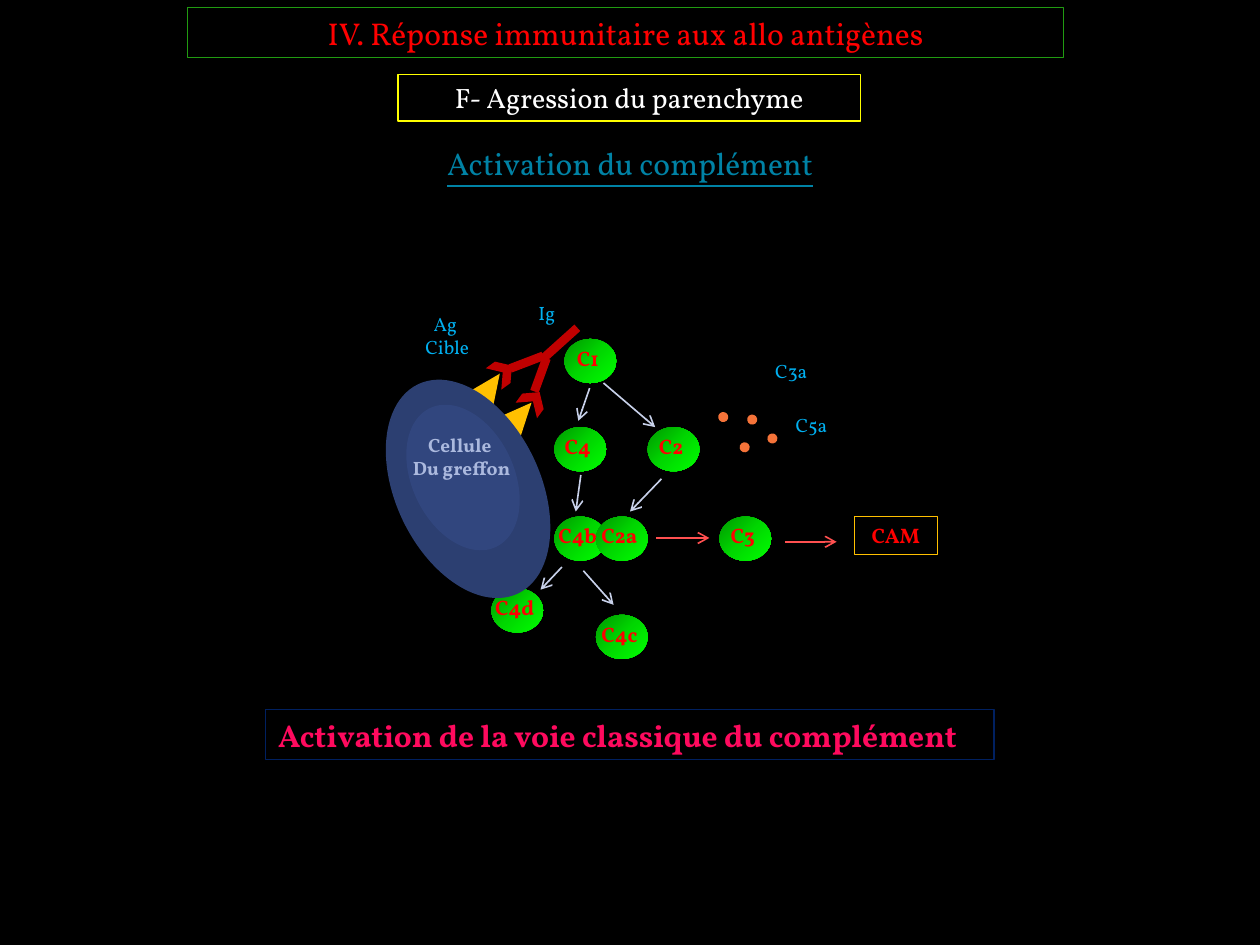
"""Builds the slide on activation of the classical complement pathway."""
from copy import deepcopy
from pptx import Presentation
from pptx import util as u
from pptx.dml.color import RGBColor as Rgb
from pptx.enum import shapes, text
from pptx.oxml import ns, xmlchemy as xml

THEME = {
    "font": "Vollkorn",
    "back": "000000", "green": "219B11", "yellow": "FFFF00", "gold": "FFC000",
    "navy": "002060", "blood": "C00000", "cell": "2C3F71", "core": "435EAA",
    "dot": "F57339", "pale": "C7D0E9", "coral": "FF5050",
    "node": ("009700", "00D700", "00FF00"),
    "thin": 0.75, "arrow": 0.94,
    "title": ("FF0000", {"size": u.Pt(18)}),
    "part": ("FFFFFF", {"size": u.Pt(16)}),
    "topic": ("0082A5", {"size": u.Pt(18), "underline": True}),
    "tag": ("FF0000", {"size": u.Pt(12), "bold": True}),
    "body": ("ABB9DE", {"size": u.Pt(11), "bold": True}),
    "note": ("00B0F0", {"size": u.Pt(11)}),
    "end": ("FF0A5E", {"size": u.Pt(18), "bold": True}),
}
KIND = shapes.MSO_SHAPE

deck = Presentation()
deck.slide_width, deck.slide_height = u.Inches(10), u.Inches(7.5)
COL, ROW = deck.slide_width / 100, deck.slide_height / 75
page = deck.slides.add_slide(deck.slide_layouts[6])
page.background.fill.solid()
page.background.fill.fore_color.rgb = Rgb.from_string(THEME["back"])


def put(kind, at, fill=None, line=None, turn=0):
    x, y, w, h = at
    box = page.shapes.add_shape(kind, int(x * COL), int(y * ROW), int(w * COL), int(h * ROW))
    box.shadow.inherit = False
    box.rotation = turn
    for paint, hue in ((box.fill, fill), (box.line.fill, line)):
        if hue:
            paint.solid()
            paint.fore_color.rgb = Rgb.from_string(THEME[hue])
        else:
            paint.background()
    if line:
        box.line.width = u.Pt(THEME["thin"])
    return box


def say(words, look, at, line=None, align=text.PP_ALIGN.CENTER):
    if line:
        box = put(KIND.RECTANGLE, at, line=line)
    else:
        x, y, w, h = at
        box = page.shapes.add_textbox(int(x * COL), int(y * ROW), int(w * COL), int(h * ROW))
    frame = box.text_frame
    frame.text = words
    form = {"word_wrap": True, "vertical_anchor": text.MSO_ANCHOR.TOP,
            "auto_size": text.MSO_AUTO_SIZE.SHAPE_TO_FIT_TEXT}
    for key, val in form.items():
        setattr(frame, key, val)
    hue, form = THEME[look]
    for para in frame.paragraphs:
        para.alignment = align
        font = para.runs[0].font
        font.name = THEME["font"]
        font.color.rgb = Rgb.from_string(hue)
        for key, val in form.items():
            setattr(font, key, val)


say("IV. Réponse immunitaire aux allo antigènes", "title", (14.9, 0.6, 69.5, 4), "green")
say("F- Agression du parenchyme", "part", (31.6, 5.9, 36.7, 3.7), "yellow")
say("Activation du complément", "topic", (16.4, 10.9, 67.2, 4))

nodes = (("C4d", 39, 46.7), ("C1", 44.8, 26.9), ("C4", 44, 33.9), ("C2", 51.4, 33.9),
         ("C4b", 44, 41), ("C2a", 47.3, 41), ("C3", 57.1, 41), ("C4c", 47.3, 48.8))
for name, x, y in nodes:
    ball = put(KIND.OVAL, (x, y, 4.1, 3.5))
    ball.fill.gradient()
    ball.fill.gradient_angle = 315
    stop = ball._element.spPr.find(".//" + ns.qn("a:gs"))
    stop.addnext(deepcopy(stop))
    for step, hue, pos in zip(ball.fill.gradient_stops, THEME["node"], (0, 0.5, 1)):
        step.color.rgb = Rgb.from_string(hue)
        step.position = pos
    say(name, "tag", (x - 1.05, y, 5.8, 3))

parts = (
    (KIND.ISOSCELES_TRIANGLE, (37.6, 29.4, 2.5, 2.8), "gold", 35.6),
    (KIND.CHEVRON, (41.4, 30.8, 1.8, 2.1), "blood", 306),
    (KIND.RECTANGLE, (42.6, 26.9, 3.7, 0.7), "blood", 318),
    (KIND.RECTANGLE, (40.4, 28.4, 2.8, 0.7), "blood", 339),
    (KIND.RECTANGLE, (41.5, 29.4, 2.8, 0.7), "blood", 290),
    (KIND.CHEVRON, (39, 28.5, 1.8, 2.1), "blood", 324),
    (KIND.ISOSCELES_TRIANGLE, (40, 31.6, 2.5, 2.8), "gold", 42),
    (KIND.OVAL, (31.4, 29.6, 11.5, 18.4), "cell", 334.5),
)
for kind, at, hue, turn in parts:
    put(kind, at, hue, turn=turn)
core = put(KIND.OVAL, (32.7, 31.8, 8.1, 12.2), "core", turn=334.5)
tint = core._element.spPr.find(".//" + ns.qn("a:srgbClr"))
tint.append(xml.OxmlElement("a:alpha"))
tint[0].set("val", "24000")

say("CAM", "tag", (67.8, 41, 6.6, 3), "gold")
say("Cellule \nDu greffon", "body", (28, 33.9, 17.3, 4.7))

paths = (
    (46.8, 30.8, 45.9, 33.4, "pale"), (47.9, 30.4, 52, 33.9, "pale"),
    (52.5, 38, 50, 40.6, "pale"), (46.1, 37.7, 45.7, 40.6, "pale"),
    (44.6, 45, 42.9, 46.8, "pale"), (46.3, 45.3, 48.7, 48, "pale"),
    (52.1, 42.7, 56.3, 42.7, "coral"), (62.3, 43, 66.4, 43, "coral"),
)
for x, y, far, low, hue in paths:
    line = page.shapes.add_connector(shapes.MSO_CONNECTOR.STRAIGHT, int(x * COL),
                                     int(y * ROW), int(far * COL), int(low * ROW))
    line.line.color.rgb = Rgb.from_string(THEME[hue])
    line.line.width = u.Pt(THEME["arrow"])
    tip = xml.OxmlElement("a:tailEnd")
    tip.set("type", "arrow")
    line.line._get_or_add_ln().append(tip)
    line._element.spPr.append(xml.OxmlElement("a:effectLst"))

say("Activation de la voie classique du complément", "end", (21.1, 56.3, 57.8, 4),
    "navy", text.PP_ALIGN.LEFT)

for x, y in ((59.3, 32.9), (58.7, 35.1), (60.9, 34.4), (57, 32.7)):
    put(KIND.OVAL, (x, y, 0.8, 0.8), "dot", turn=350)

notes = (("Ig", (40.5, 23.4, 5.8, 2.9)), ("Ag \nCible", (32.2, 24.3, 6.6, 4.7)),
         ("C3a", (59.9, 28, 5.8, 2.9)), ("C5a", (61.5, 32.3, 5.8, 2.9)))
for words, at in notes:
    say(words, "note", at)

deck.save("out.pptx")
